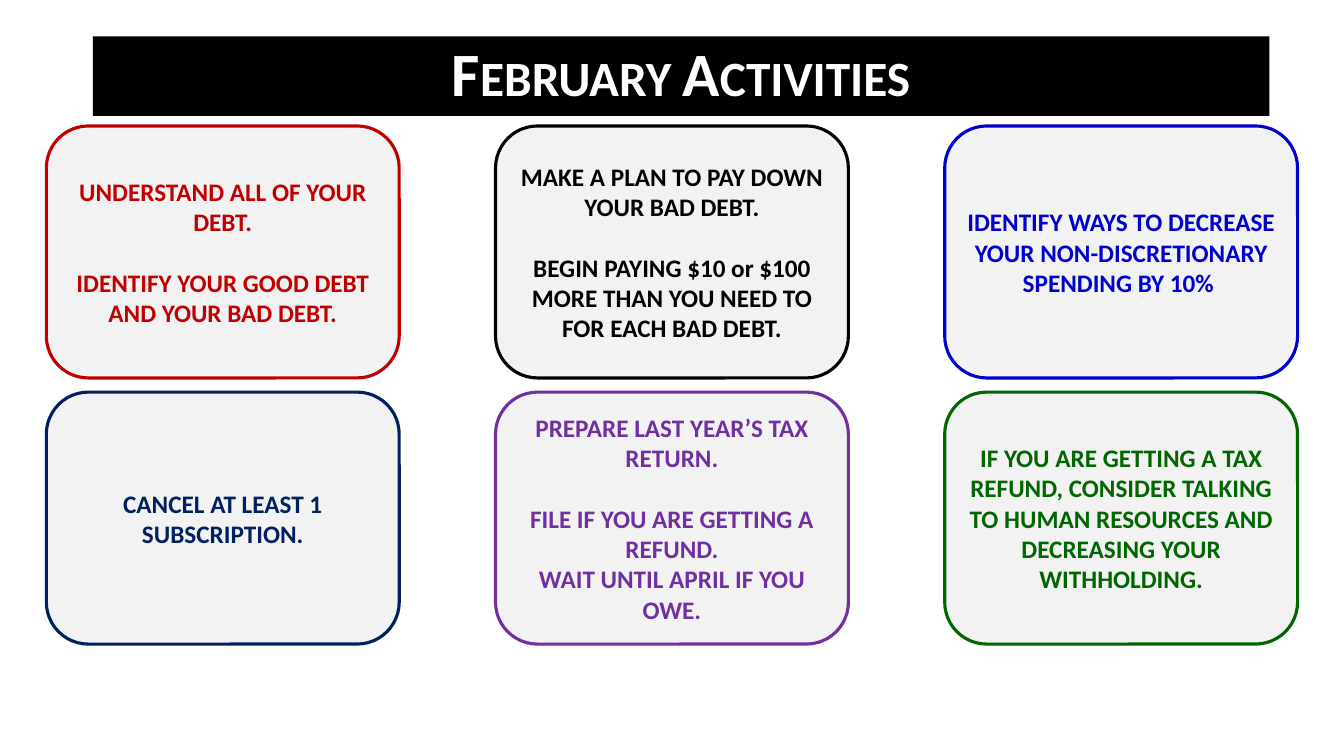
from dataclasses import dataclass

from pptx import Presentation
from pptx import util as u
from pptx.dml.color import RGBColor
from pptx.enum import shapes, text


@dataclass(frozen=True)
class Theme:
    font: str = "Calibri"
    title_size: int = 44
    card_size: int = 18
    topic_gap: int = 22
    outline: float = 2.25
    banner: str = "000000"
    banner_text: str = "FFFFFF"
    card: str = "F2F2F2"


@dataclass(frozen=True)
class Grid:
    """Card grid in inches, spread evenly between equal side margins."""
    width: float = 13.33
    height: float = 7.5
    margin: float = 0.46
    top: float = 1.25
    card_width: float = 3.5
    card_height: float = 2.5
    row_gap: float = 0.14
    columns: int = 3

    def cell(self, column, row):
        free = self.width - 2 * self.margin - self.card_width
        left = self.margin + column * free / (self.columns - 1)
        top = self.top + row * (self.card_height + self.row_gap)
        return [u.Inches(n) for n in (left, top, self.card_width, self.card_height)]


class ActivitySlide:
    def __init__(self, deck, theme, grid):
        self.theme, self.grid = theme, grid
        deck.slide_width = u.Inches(grid.width)
        deck.slide_height = u.Inches(grid.height)
        self.slide = deck.slides.add_slide(deck.slide_layouts[5])

    def paint(self, shape, color):
        shape.fill.solid()
        shape.fill.fore_color.rgb = RGBColor.from_string(color)

    def set_wording(self, frame, wording, size, color):
        frame.text = wording
        frame.word_wrap = True
        frame.auto_size = text.MSO_AUTO_SIZE.NONE
        frame.vertical_anchor = text.MSO_ANCHOR.MIDDLE
        for paragraph in frame.paragraphs:
            paragraph.alignment = text.PP_ALIGN.CENTER
            for run in paragraph.runs:
                run.font.name = self.theme.font
                run.font.size = u.Pt(size)
                run.font.bold = True
                run.font.color.rgb = RGBColor.from_string(color)

    def title(self, wording):
        banner = self.slide.shapes.title
        banner.left, banner.top = u.Inches(0.92), u.Inches(0.36)
        banner.width, banner.height = u.Inches(11.67), u.Inches(0.79)
        self.paint(banner, self.theme.banner)
        self.set_wording(banner.text_frame, wording,
                         self.theme.title_size, self.theme.banner_text)
        heading = banner.text_frame.paragraphs[0]
        heading.line_spacing = 0.9
        heading.runs[0]._r.get_or_add_rPr().set("cap", "small")

    def card(self, column, row, color, topics):
        """Draw one activity; each topic is a list of lines, with a gap between topics."""
        card = self.slide.shapes.add_shape(
            shapes.MSO_SHAPE.ROUNDED_RECTANGLE, *self.grid.cell(column, row))
        card.shadow.inherit = False
        self.paint(card, self.theme.card)
        card.line.color.rgb = RGBColor.from_string(color)
        card.line.width = u.Pt(self.theme.outline)
        lines = [line for topic in topics for line in topic]
        self.set_wording(card.text_frame, "\n".join(lines), self.theme.card_size, color)
        start = 0
        for topic in topics[:-1]:
            start += len(topic)
            card.text_frame.paragraphs[start].space_before = u.Pt(self.theme.topic_gap)


ACTIVITIES = [
    ("C00000", [["UNDERSTAND ALL OF YOUR DEBT."],
                ["IDENTIFY YOUR GOOD DEBT AND YOUR BAD DEBT."]]),
    ("000000", [["MAKE A PLAN TO PAY DOWN YOUR BAD DEBT."],
                ["BEGIN PAYING $10 or $100 MORE THAN YOU NEED TO FOR EACH BAD DEBT."]]),
    ("0000CC", [["IDENTIFY WAYS TO DECREASE YOUR NON-DISCRETIONARY SPENDING BY 10% "]]),
    ("002060", [["CANCEL AT LEAST 1 SUBSCRIPTION."]]),
    ("7030A0", [["PREPARE LAST YEAR’S TAX RETURN."],
                ["FILE IF YOU ARE GETTING A REFUND.", "WAIT UNTIL APRIL IF YOU OWE."]]),
    ("006600", [["IF YOU ARE GETTING A TAX REFUND, CONSIDER TALKING TO HUMAN "
                 "RESOURCES AND DECREASING YOUR WITHHOLDING."]]),
]


def main():
    deck = Presentation()
    grid = Grid()
    february = ActivitySlide(deck, Theme(), grid)
    february.title("February Activities")
    for index, (color, topics) in enumerate(ACTIVITIES):
        row, column = divmod(index, grid.columns)
        february.card(column, row, color, topics)
    deck.save("out.pptx")


if __name__ == "__main__":
    main()
